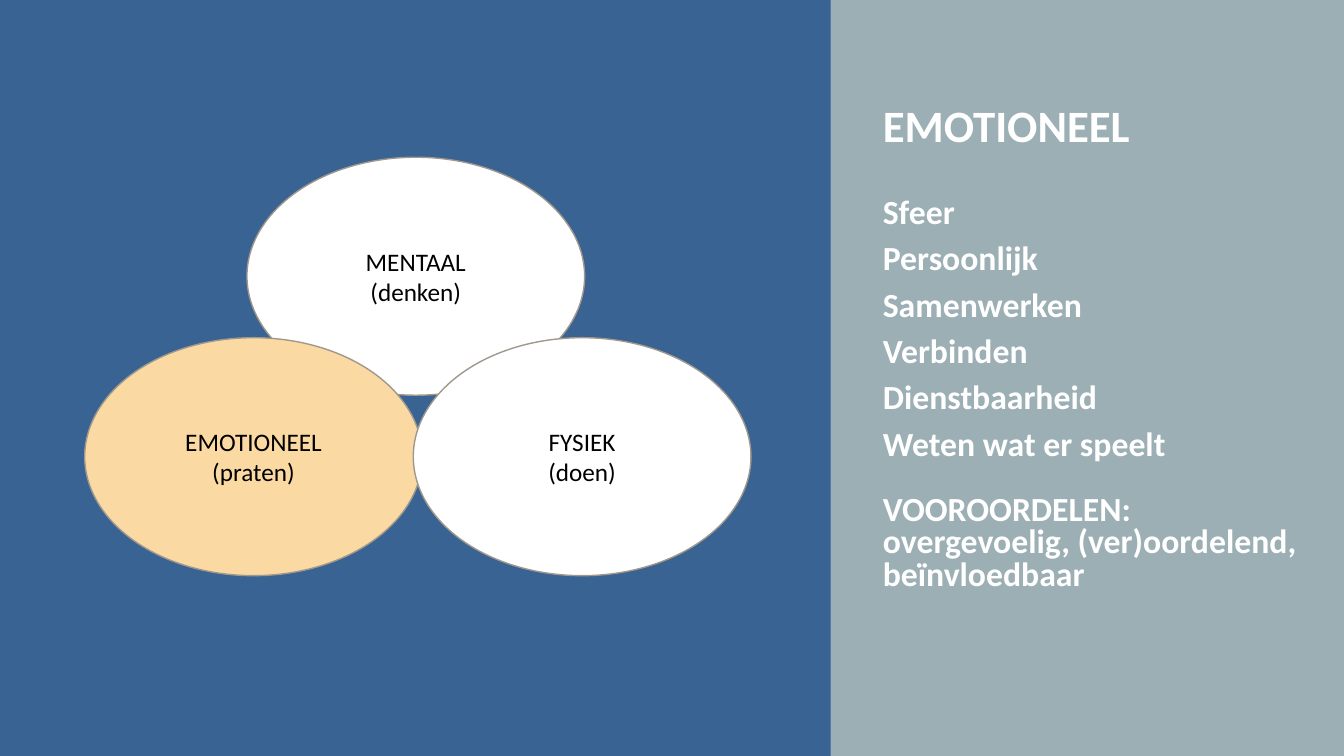
from pptx import Presentation
from pptx.dml.color import RGBColor
from pptx.enum.shapes import MSO_SHAPE
from pptx.enum.text import MSO_ANCHOR, PP_ALIGN
from pptx.util import Pt

RECT, OVAL = MSO_SHAPE.RECTANGLE, MSO_SHAPE.OVAL
MIDDLE, CENTER = MSO_ANCHOR.MIDDLE, PP_ALIGN.CENTER

# Content
TITLE = "EMOTIONEEL"
TRAITS = ["Sfeer", "Persoonlijk", "Samenwerken", "Verbinden",
          "Dienstbaarheid", "Weten wat er speelt"]
PREJUDICES = "VOOROORDELEN:\novergevoelig, (ver)oordelend, beïnvloedbaar"
CENTRES = [  # label, left, top, fill
    ("MENTAAL\n(denken)", 176.4, 112.3, "FFFFFF"),
    ("EMOTIONEEL\n(praten)", 60.5, 241.2, "FBD9A3"),
    ("FYSIEK\n(doen)", 295.2, 241.2, "FFFFFF"),
]

# Layout and style
SLIDE_W, SLIDE_H = 960, 540
PANEL_W = 593.3
OVAL_W, OVAL_H = 241.2, 170
TEXT_LEFT = 623.5
FONT = "Calibri"
TRAIT_GAP, PREJUDICE_GAP = 10, 23.5


def color(value):
    return RGBColor.from_string(value)


def add_shape(kind, left, top, width, height, fill):
    sp = s.shapes.add_shape(kind, Pt(left), Pt(top), Pt(width), Pt(height))
    sp.shadow.inherit = False
    sp.fill.solid()
    sp.fill.fore_color.rgb = color(fill)
    sp.line.fill.background()
    return sp


def add_box(top, width, height):
    tf = s.shapes.add_textbox(Pt(TEXT_LEFT), Pt(top), Pt(width), Pt(height)).text_frame
    tf.word_wrap = True
    return tf


def write(p, text, size, ink, bold=False):
    p.text = text
    p.font.name, p.font.size, p.font.bold = FONT, Pt(size), bold
    p.font.color.rgb = color(ink)


prs = Presentation()
prs.slide_width, prs.slide_height = Pt(SLIDE_W), Pt(SLIDE_H)
s = prs.slides.add_slide(prs.slide_layouts[6])
s.background.fill.solid()
s.background.fill.fore_color.rgb = color("9BAFB5")

# Left panel with the three centres
add_shape(RECT, 0, 0, PANEL_W, SLIDE_H, "386393")
for label, left, top, fill in CENTRES:
    sp = add_shape(OVAL, left, top, OVAL_W, OVAL_H, fill)
    sp.line.color.rgb = color("A0988C")
    sp.line.width = Pt(1)
    tf = sp.text_frame
    tf.word_wrap = True
    tf.vertical_anchor = MIDDLE
    p = tf.paragraphs[0]
    p.alignment = CENTER
    write(p, label, 18, "000000")

# Title and traits on the right
write(add_box(66.2, 240.5, 46).paragraphs[0], TITLE, 32, "FFFFFF", True)

tf = add_box(138.2, SLIDE_W - TEXT_LEFT, 319)
for i, text in enumerate(TRAITS + [PREJUDICES]):
    p = tf.add_paragraph() if i else tf.paragraphs[0]
    write(p, text, 24.1, "FFFFFF", True)
    p.line_spacing = 0.8
    if i:
        p.space_before = Pt(PREJUDICE_GAP if text == PREJUDICES else TRAIT_GAP)
prs.save("out.pptx")
